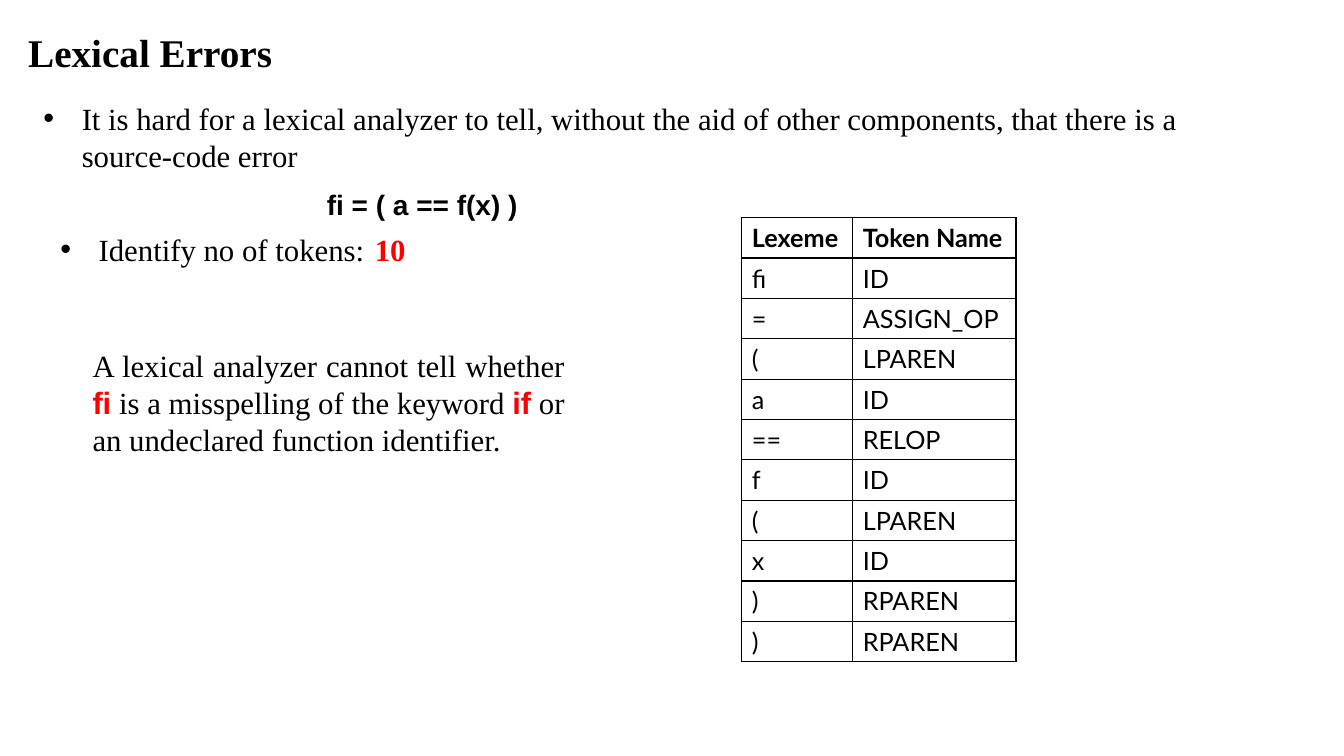
import pptx
import pptx.dml.color
import pptx.enum.text
import pptx.oxml.ns
import pptx.util
from lxml import etree

BLACK = pptx.dml.color.RGBColor(0x00, 0x00, 0x00)
RED = pptx.dml.color.RGBColor(0xFF, 0x00, 0x00)
SERIF, SANS, TABLE_FONT = "Times New Roman", "Arial", "Lato"
ALIGN = pptx.enum.text.PP_ALIGN
ANCHOR = pptx.enum.text.MSO_ANCHOR

TOKENS = [
    ("Lexeme", "Token Name"),
    ("fi", "ID"),
    ("=", "ASSIGN_OP"),
    ("(", "LPAREN"),
    ("a", "ID"),
    ("==", "RELOP"),
    ("f", "ID"),
    ("(", "LPAREN"),
    ("x", "ID"),
    (")", "RPAREN"),
    (")", "RPAREN"),
]


class LessonSlide:
    """Builds one slide; every length is a percentage of the slide's width or height."""

    body_size = 22
    indent = pptx.util.Inches(0.38)
    border = pptx.util.Pt(1)

    def __init__(self, deck):
        self.deck = deck
        self.slide = deck.slides.add_slide(deck.slide_layouts[5])

    def across(self, share):
        return round(self.deck.slide_width * share / 100)

    def down(self, share):
        return round(self.deck.slide_height * share / 100)

    def area(self, left, top, width, height):
        return self.across(left), self.down(top), self.across(width), self.down(height)

    def add_words(self, paragraph, text, size=body_size, font=SERIF, color=BLACK, bold=False):
        run = paragraph.add_run()
        run.text = text
        run.font.size = pptx.util.Pt(size)
        run.font.name = font
        run.font.color.rgb = color
        run.font.bold = bold

    def title(self, area, text):
        heading = self.slide.shapes.title
        heading.left, heading.top, heading.width, heading.height = self.area(*area)
        frame = heading.text_frame
        frame.auto_size = pptx.enum.text.MSO_AUTO_SIZE.NONE
        frame.vertical_anchor = ANCHOR.TOP
        line = frame.paragraphs[0]
        line.alignment = ALIGN.LEFT
        line.line_spacing = 1.0
        self.add_words(line, text, size=28, bold=True)

    def text(self, area, runs, align=ALIGN.LEFT, bullet=False):
        """Each run is a (text, style) pair, the style being options of add_words()."""
        frame = self.slide.shapes.add_textbox(*self.area(*area)).text_frame
        frame.word_wrap = True
        paragraph = frame.paragraphs[0]
        paragraph.alignment = align
        if bullet:
            self.add_bullet(paragraph)
        for text, style in runs:
            self.add_words(paragraph, text, **style)

    def add_bullet(self, paragraph):
        properties = paragraph._p.get_or_add_pPr()
        properties.set("marL", str(self.indent))
        properties.set("indent", str(-self.indent))
        qn = pptx.oxml.ns.qn
        etree.SubElement(properties, qn("a:buFont"), typeface=SANS)
        etree.SubElement(properties, qn("a:buChar"), char="•")

    def table(self, left, top, column_widths, row_height, rows):
        area = self.area(left, top, sum(column_widths), row_height * len(rows))
        table = self.slide.shapes.add_table(len(rows), len(column_widths), *area).table
        for column, width in zip(table.columns, column_widths):
            column.width = self.across(width)
        for r, values in enumerate(rows):
            table.rows[r].height = self.down(row_height)
            for c, value in enumerate(values):
                cell = table.cell(r, c)
                cell.vertical_anchor = ANCHOR.MIDDLE
                self.add_borders(cell)
                cell.fill.background()
                self.add_words(cell.text_frame.paragraphs[0], value,
                               size=18, font=TABLE_FONT, bold=r == 0)

    def add_borders(self, cell):
        qn = pptx.oxml.ns.qn
        properties = cell._tc.get_or_add_tcPr()
        for side in ("a:lnL", "a:lnR", "a:lnT", "a:lnB"):
            line = etree.SubElement(properties, qn(side), w=str(self.border))
            fill = etree.SubElement(line, qn("a:solidFill"))
            etree.SubElement(fill, qn("a:srgbClr"), val=str(BLACK))


def main():
    deck = pptx.Presentation()
    deck.slide_width = pptx.util.Inches(13.33)
    deck.slide_height = pptx.util.Inches(7.5)

    lesson = LessonSlide(deck)
    plain = {}
    code = {"font": SANS, "color": RED, "bold": True}

    lesson.title((1.35, 3.07, 50, 7.6), "Lexical Errors")
    lesson.text((2.5, 12.53, 92.55, 11.2), [
        ("It is hard for a lexical analyzer to tell, without the aid of other "
         "components, that there is a source-code error", plain),
    ], bullet=True)
    lesson.text((21.75, 24.13, 19.35, 5.87), [
        ("fi = ( a == f(x) )", {"size": 20, "font": SANS, "bold": True}),
    ], align=ALIGN.CENTER)
    lesson.text((3.75, 29.87, 24.5, 6.27), [("Identify no of tokens:", plain)], bullet=True)
    lesson.text((27.15, 29.87, 4, 6.27), [("10", {"color": RED, "bold": True})])
    lesson.table(55.2, 28.8, (8.25, 12.15), 5.34, TOKENS)
    lesson.text((6.15, 45.2, 36.6, 16.13), [
        ("A lexical analyzer cannot tell whether ", plain),
        ("fi", code),
        (" is a misspelling of the keyword ", plain),
        ("if", code),
        (" or an undeclared function identifier.", plain),
    ], align=ALIGN.JUSTIFY)

    deck.save("out.pptx")


if __name__ == "__main__":
    main()
